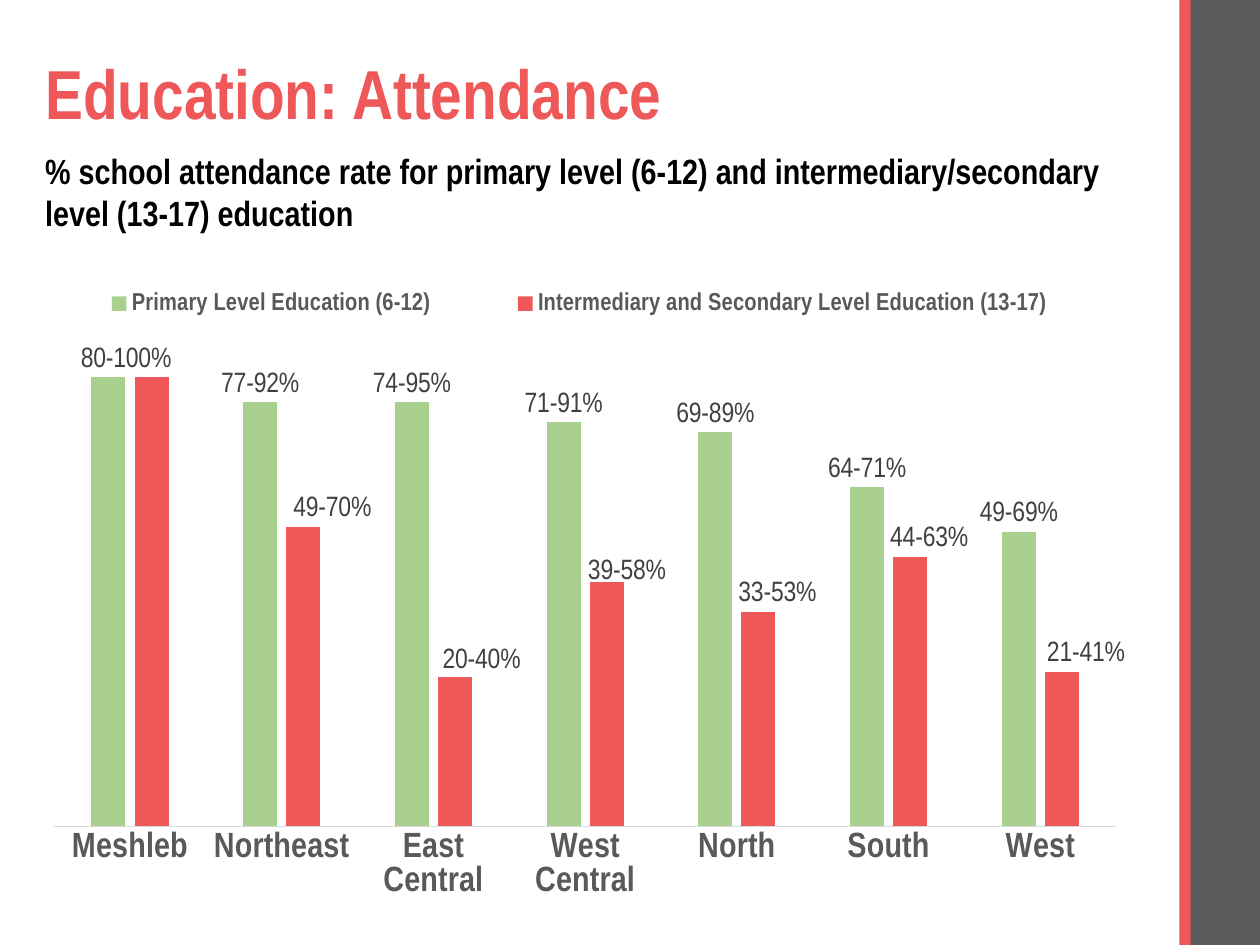
import pptx
import pptx.chart.data
import pptx.dml.color
import pptx.enum.chart
import pptx.enum.shapes
import pptx.enum.text
import pptx.oxml
import pptx.oxml.ns
import pptx.util
from dataclasses import dataclass

Inches = pptx.util.Inches


@dataclass(frozen=True)
class Theme:
    font: str = "Arial Narrow"
    coral: str = "EE5859"
    green: str = "A9D08E"
    gray: str = "5A5A5A"
    axis_text: str = "595959"
    label_text: str = "404040"
    line: str = "D9D9D9"
    black: str = "000000"
    title: float = 39.6
    subtitle: int = 20
    category: int = 20
    legend: int = 14
    label: int = 16


THEME = Theme()
CHART_WIDTH, CHART_HEIGHT = 8.78, 5.08
REGIONS = ["Meshleb", "Northeast", "East Central", "West Central", "North", "South", "West"]
ATTENDANCE = [
    {
        "name": "Primary Level Education (6-12)",
        "color": THEME.green,
        "values": [90, 85, 85, 81, 79, 68, 59],
        "labels": ["80-100%", "77-92%", "74-95%", "71-91%", "69-89%", "64-71%", "49-69%"],
        "shifts": [(0.14, 0)] + [(0, 0)] * 6,
    },
    {
        "name": "Intermediary and Secondary Level Education (13-17)",
        "color": THEME.coral,
        "values": [90, 60, 30, 49, 43, 54, 31],
        "labels": [None, "49-70%", "20-40%", "39-58%", "33-53%", "44-63%", "21-41%"],
        "shifts": [(0, 0), (0.23, 0), (0.21, 0.02), (0.16, 0.06), (0.15, 0), (0.15, 0), (0.19, 0)],
    },
]


def rgb(color):
    return pptx.dml.color.RGBColor.from_string(color)


def style_font(font, size, color, bold=True):
    font.name = THEME.font
    font.size = pptx.util.Pt(size)
    font.bold = bold
    font.color.rgb = rgb(color)


def write(tf, text, size, color, bold=True, spacing=None, anchor=None, wrap=True):
    tf.word_wrap = wrap
    if anchor is not None:
        tf.vertical_anchor = anchor
    p = tf.paragraphs[0]
    if spacing:
        p.alignment = pptx.enum.text.PP_ALIGN.LEFT
        p.line_spacing = spacing
    r = p.add_run()
    r.text = text
    style_font(r.font, size, color, bold)


def add_band(slide, left, width, color):
    sp = slide.shapes.add_shape(
        pptx.enum.shapes.MSO_SHAPE.RECTANGLE, Inches(left), 0, Inches(width), Inches(7.5))
    sp.shadow.inherit = False
    sp.fill.solid()
    sp.fill.fore_color.rgb = rgb(color)
    sp.line.fill.background()


def add_title(slide, text):
    sp = slide.shapes.title
    sp.left, sp.top, sp.width, sp.height = map(Inches, (0.26, 0.4, 8.69, 0.74))
    write(sp.text_frame, text, THEME.title, THEME.coral, spacing=0.9,
          anchor=pptx.enum.text.MSO_ANCHOR.MIDDLE)


def add_subtitle(slide, text):
    sp = slide.shapes.add_textbox(*map(Inches, (0.26, 1.14, 8.94, 0.77)))
    write(sp.text_frame, text, THEME.subtitle, THEME.black)


def make_layout(x, y, w=None, h=None, inner=False):
    parts = ['<c:layoutTarget val="inner"/>'] if inner else []
    if w is not None:
        parts.append('<c:xMode val="edge"/><c:yMode val="edge"/>')
    parts.append(f'<c:x val="{x / CHART_WIDTH}"/><c:y val="{y / CHART_HEIGHT}"/>')
    if w is not None:
        parts.append(f'<c:w val="{w / CHART_WIDTH}"/><c:h val="{h / CHART_HEIGHT}"/>')
    return pptx.oxml.parse_xml(
        f'<c:layout {pptx.oxml.ns.nsdecls("c")}><c:manualLayout>'
        f'{"".join(parts)}</c:manualLayout></c:layout>')


def place(element, layout, after=None):
    for old in element.findall(pptx.oxml.ns.qn("c:layout")):
        element.remove(old)
    if after is None:
        element.insert(0, layout)
    else:
        element.find(pptx.oxml.ns.qn(after)).addnext(layout)


def hide_label(dlbls, index):
    dlbls.insert(0, pptx.oxml.parse_xml(
        f'<c:dLbl {pptx.oxml.ns.nsdecls("c")}><c:idx val="{index}"/>'
        '<c:delete val="1"/></c:dLbl>'))


def label_points(series, labels, shifts):
    data_labels = series.data_labels
    data_labels.show_value = True
    style_font(data_labels.font, THEME.label, THEME.label_text)
    dlbls = data_labels._element
    for i, (text, shift) in enumerate(zip(labels, shifts)):
        if text is None:
            hide_label(dlbls, i)
            continue
        label = series.points[i].data_label
        write(label.text_frame, text, THEME.label, THEME.label_text, bold=False, wrap=False)
        label.position = pptx.enum.chart.XL_LABEL_POSITION.OUTSIDE_END
        if any(shift):
            dlbl = dlbls.findall(pptx.oxml.ns.qn("c:dLbl"))[-1]
            place(dlbl, make_layout(*shift), after="c:idx")


def format_axes(chart):
    axis = chart.category_axis
    axis.major_tick_mark = pptx.enum.chart.XL_TICK_MARK.NONE
    axis.format.line.color.rgb = rgb(THEME.line)
    axis.format.line.width = pptx.util.Pt(0.75)
    style_font(axis.tick_labels.font, THEME.category, THEME.axis_text)
    axis = chart.value_axis
    axis.minimum_scale, axis.maximum_scale = 0, 100
    axis.has_major_gridlines = False
    axis.visible = False


def add_attendance_chart(slide):
    data = pptx.chart.data.CategoryChartData()
    data.categories = REGIONS
    for level in ATTENDANCE:
        data.add_series(level["name"], level["values"])
    chart = slide.shapes.add_chart(
        pptx.enum.chart.XL_CHART_TYPE.COLUMN_CLUSTERED,
        *map(Inches, (0.26, 2.17, CHART_WIDTH, CHART_HEIGHT)), data).chart
    style_font(chart.font, 10, THEME.black, bold=False)
    chart.has_title = False
    chart.has_legend = True
    chart.legend.position = pptx.enum.chart.XL_LEGEND_POSITION.TOP
    chart.legend.include_in_layout = False
    style_font(chart.legend.font, THEME.legend, THEME.axis_text)
    place(chart.legend._element, make_layout(0, 0.01, 8.68, 0.46), after="c:legendPos")
    format_axes(chart)
    plot = chart.plots[0]
    plot.gap_width, plot.overlap = 219, -27
    plot.vary_by_categories = False
    for series, level in zip(plot.series, ATTENDANCE):
        series.format.fill.solid()
        series.format.fill.fore_color.rgb = rgb(level["color"])
        label_points(series, level["labels"], level["shifts"])
    plot_area = plot._element.getparent()
    place(plot_area, make_layout(0.17, 0.43, 8.43, 3.96, inner=True))


def main():
    prs = pptx.Presentation()
    prs.slide_width, prs.slide_height = Inches(10), Inches(7.5)
    slide = prs.slides.add_slide(prs.slide_layouts[5])
    add_band(slide, 9.44, 0.56, THEME.gray)
    add_band(slide, 9.36, 0.09, THEME.coral)
    add_title(slide, "Education: Attendance")
    add_attendance_chart(slide)
    add_subtitle(slide, "% school attendance rate for primary level (6-12) and "
                        "intermediary/secondary level (13-17) education")
    prs.save("out.pptx")


if __name__ == "__main__":
    main()
